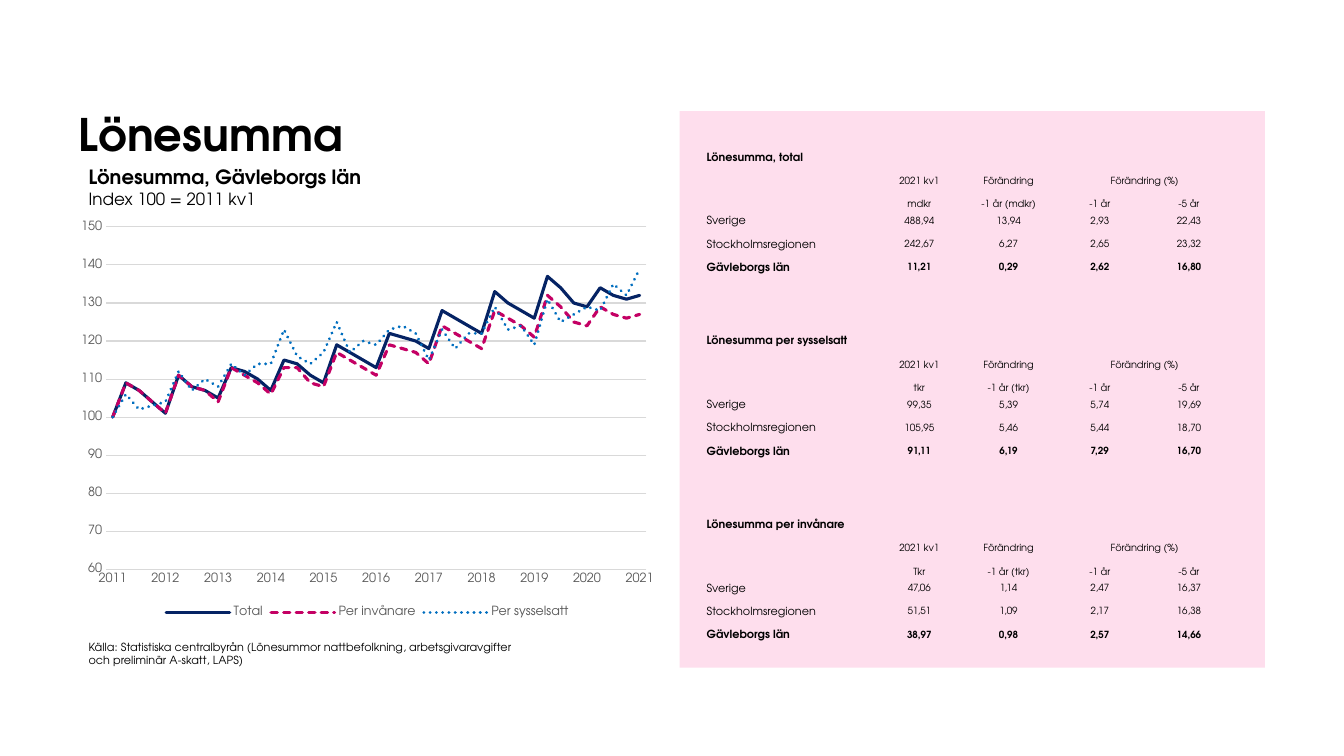
from dataclasses import dataclass

from lxml.etree import SubElement
from pptx import Presentation
from pptx.chart.data import CategoryChartData
from pptx.dml.color import RGBColor
from pptx.enum.chart import XL_CHART_TYPE, XL_LEGEND_POSITION, XL_MARKER_STYLE, XL_TICK_MARK
from pptx.enum.dml import MSO_LINE
from pptx.enum.shapes import MSO_SHAPE
from pptx.enum.text import MSO_ANCHOR, MSO_AUTO_SIZE, PP_ALIGN
from pptx.oxml.ns import qn
from pptx.util import Pt

FONT = "TeX Gyre Adventor"
BLACK, GREY, GRID, PINK = "000000", "595959", "D9D9D9", "FEDEED"
NO_STYLE = "{2D5ABB26-0587-4C30-8999-92F81FD0307C}"


@dataclass
class Line:
    name: str
    color: str
    dash: MSO_LINE
    values: list[int]


@dataclass
class Block:
    title: str
    unit: str
    change_unit: str
    figures: list[list[str]]


LINES = [
    Line("Total", "052364", MSO_LINE.SOLID,
         [100, 109, 107, 104, 101, 111, 108, 107, 105, 113, 112, 110, 107, 115,
          114, 111, 109, 119, 117, 115, 113, 122, 121, 120, 118, 128, 126, 124,
          122, 133, 130, 128, 126, 137, 134, 130, 129, 134, 132, 131, 132]),
    Line("Per invånare", "C40064", MSO_LINE.SQUARE_DOT,
         [100, 109, 107, 104, 101, 111, 108, 107, 104, 113, 111, 109, 106, 113,
          113, 109, 108, 117, 115, 113, 111, 119, 118, 117, 114, 124, 122, 120,
          118, 128, 126, 124, 121, 132, 129, 125, 124, 129, 127, 126, 127]),
    Line("Per sysselsatt", "006EBF", MSO_LINE.ROUND_DOT,
         [100, 106, 102, 103, 104, 112, 107, 110, 108, 114, 111, 114, 114, 123,
          116, 114, 117, 125, 117, 120, 119, 123, 124, 122, 115, 123, 118, 122,
          122, 129, 123, 124, 119, 131, 125, 127, 129, 128, 135, 132, 139]),
]
REGIONS = ["Sverige", "Stockholmsregionen", "Gävleborgs län"]
BLOCKS = [
    Block("Lönesumma, total", "mdkr", "-1 år (mdkr)",
          [["488,94", "13,94", "2,93", "22,43"],
           ["242,67", "6,27", "2,65", "23,32"],
           ["11,21", "0,29", "2,62", "16,80"]]),
    Block("Lönesumma per sysselsatt", "tkr", "-1 år (tkr)",
          [["99,35", "5,39", "5,74", "19,69"],
           ["105,95", "5,46", "5,44", "18,70"],
           ["91,11", "6,19", "7,29", "16,70"]]),
    Block("Lönesumma per invånare", "Tkr", "-1 år (tkr)",
          [["47,06", "1,14", "2,47", "16,37"],
           ["51,51", "1,09", "2,17", "16,38"],
           ["38,97", "0,98", "2,57", "14,66"]]),
]


def rgb(color: str) -> RGBColor:
    return RGBColor.from_string(color)


def set_font(font, size: float, color: str = BLACK, bold: bool = False) -> None:
    font.name, font.size, font.bold = FONT, Pt(size), bold
    font.color.rgb = rgb(color)


def add_text_box(slide, left: float, top: float, width: float, height: float):
    tf = slide.shapes.add_textbox(Pt(left), Pt(top), Pt(width), Pt(height)).text_frame
    tf.word_wrap = True
    return tf.paragraphs[0]


def add_index_chart(slide) -> None:
    data = CategoryChartData()
    data.categories = [str(2011 + q // 4) if q % 4 == 0 else ""
                       for q in range(len(LINES[0].values))]
    for line in LINES:
        data.add_series(line.name, line.values)
    chart = slide.shapes.add_chart(XL_CHART_TYPE.LINE, Pt(50.4), Pt(153.4),
                                   Pt(424), Pt(291), data).chart
    set_font(chart.font, 10)
    chart.has_title = False
    chart.has_legend = True
    chart.legend.position = XL_LEGEND_POSITION.BOTTOM
    chart.legend.include_in_layout = False
    set_font(chart.legend.font, 9, GREY)

    # Axes
    cat, val = chart.category_axis, chart.value_axis
    for axis in (cat, val):
        axis.major_tick_mark = axis.minor_tick_mark = XL_TICK_MARK.NONE
        set_font(axis.tick_labels.font, 9, GREY)
    val.minimum_scale, val.maximum_scale, val.major_unit = 60, 150, 10
    val.format.line.fill.background()
    for grid in (cat.format.line, val.major_gridlines.format.line):
        grid.color.rgb = rgb(GRID)
        grid.width = Pt(0.75)
    body = cat._element.find(qn("c:txPr")).find(qn("a:bodyPr"))
    body.set("rot", "-60000000")
    body.set("vert", "horz")

    # Series
    for series, line in zip(chart.plots[0].series, LINES):
        series.smooth = False
        series.marker.style = XL_MARKER_STYLE.NONE
        ln = series.format.line
        ln.color.rgb = rgb(line.color)
        ln.width = Pt(2.25)
        ln.dash_style = line.dash
        ln._get_or_add_ln().set("cap", "rnd")

    # Fixed inner plot area
    plot_area = chart._chartSpace.chart.plotArea
    layout = plot_area.find(qn("c:layout"))
    if layout is None:
        layout = SubElement(plot_area, qn("c:layout"))
        plot_area.insert(0, layout)
    manual = SubElement(layout, qn("c:manualLayout"))
    for tag, value in (("layoutTarget", "inner"), ("xMode", "edge"), ("yMode", "edge"),
                       ("x", "0.06"), ("y", "0.03"), ("w", "0.91"), ("h", "0.84")):
        SubElement(manual, qn(f"c:{tag}")).set("val", value)


def fill_row(table, row: int, texts: list[str], anchor: MSO_ANCHOR, bold: bool = False) -> None:
    for col, text in enumerate(texts):
        cell = table.cell(row, col)
        cell.fill.background()
        cell.margin_left = cell.margin_right = cell.margin_top = Pt(0.72)
        cell.margin_bottom = 0
        cell.vertical_anchor = anchor
        p = cell.text_frame.paragraphs[0]
        if not text:
            p._p.get_or_add_endParaRPr().set("sz", "700")
            continue
        p.text = text
        p.alignment = PP_ALIGN.CENTER if col else PP_ALIGN.LEFT
        set_font(p.font, 7 if col else 8, bold=bold)


def add_wage_table(slide) -> None:
    rows_per_block = 7
    n_rows = rows_per_block * len(BLOCKS) - 1
    table = slide.shapes.add_table(n_rows, 5, Pt(504), Pt(100), Pt(377.3), Pt(363)).table
    table.first_row = table.horz_banding = False
    table._tbl.tblPr.find(qn("a:tableStyleId")).text = NO_STYLE
    for column, width in zip(table.columns, (122.4, 60.5, 67, 63.4, 64)):
        column.width = Pt(width)
    for i, row in enumerate(table.rows):
        row.height = Pt(31.7 if i and i % rows_per_block == 0 else 16.6)

    blank = [""] * 5
    for i, block in enumerate(BLOCKS):
        top = i * rows_per_block
        if i:
            fill_row(table, top - 1, blank, MSO_ANCHOR.BOTTOM)
        fill_row(table, top, [block.title] + blank[1:], MSO_ANCHOR.BOTTOM, bold=True)
        fill_row(table, top + 1, ["", "2021 kv1", "Förändring", "Förändring (%)", ""],
                 MSO_ANCHOR.BOTTOM)
        table.cell(top + 1, 3).merge(table.cell(top + 1, 4))
        fill_row(table, top + 2, ["", block.unit, block.change_unit, "-1 år", "-5 år"],
                 MSO_ANCHOR.BOTTOM)
        for j, (region, figures) in enumerate(zip(REGIONS, block.figures)):
            fill_row(table, top + 3 + j, [region] + figures, MSO_ANCHOR.MIDDLE,
                     bold=region == REGIONS[-1])


def main() -> None:
    prs = Presentation()
    prs.slide_width, prs.slide_height = Pt(960), Pt(540)
    slide = prs.slides.add_slide(prs.slide_layouts[5])

    # Title
    title = slide.shapes.title
    title.left, title.top, title.width, title.height = Pt(56.2), Pt(26.6), Pt(664), Pt(87.8)
    tf = title.text_frame
    tf.margin_left = tf.margin_right = tf.margin_top = tf.margin_bottom = 0
    tf.vertical_anchor = MSO_ANCHOR.BOTTOM
    tf.auto_size = MSO_AUTO_SIZE.NONE
    tf.text = "Lönesumma"
    p = tf.paragraphs[0]
    p.alignment = PP_ALIGN.LEFT
    set_font(p.font, 32, bold=True)

    # Pink panel
    panel = slide.shapes.add_shape(MSO_SHAPE.RECTANGLE, Pt(485.5), Pt(79.4), Pt(418), Pt(397.5))
    panel.shadow.inherit = False
    panel.fill.solid()
    panel.fill.fore_color.rgb = rgb(PINK)
    panel.line.fill.background()

    # Source note
    p = add_text_box(slide, 56.2, 453.6, 317.5, 26.6)
    p.text = ("Källa: Statistiska centralbyrån (Lönesummor nattbefolkning, "
              "arbetsgivaravgifter och preliminär A-skatt, LAPS)")
    set_font(p.font, 8)

    # Chart heading
    p = add_text_box(slide, 56.2, 114.5, 417.6, 38.9)
    r = p.add_run()
    r.text = "Lönesumma, Gävleborgs län"
    set_font(r.font, 14, bold=True)
    p.add_line_break()
    r = p.add_run()
    r.text = "Index 100 = 2011 kv1"
    set_font(r.font, 12)

    add_wage_table(slide)
    add_index_chart(slide)
    prs.save("out.pptx")


if __name__ == "__main__":
    main()
